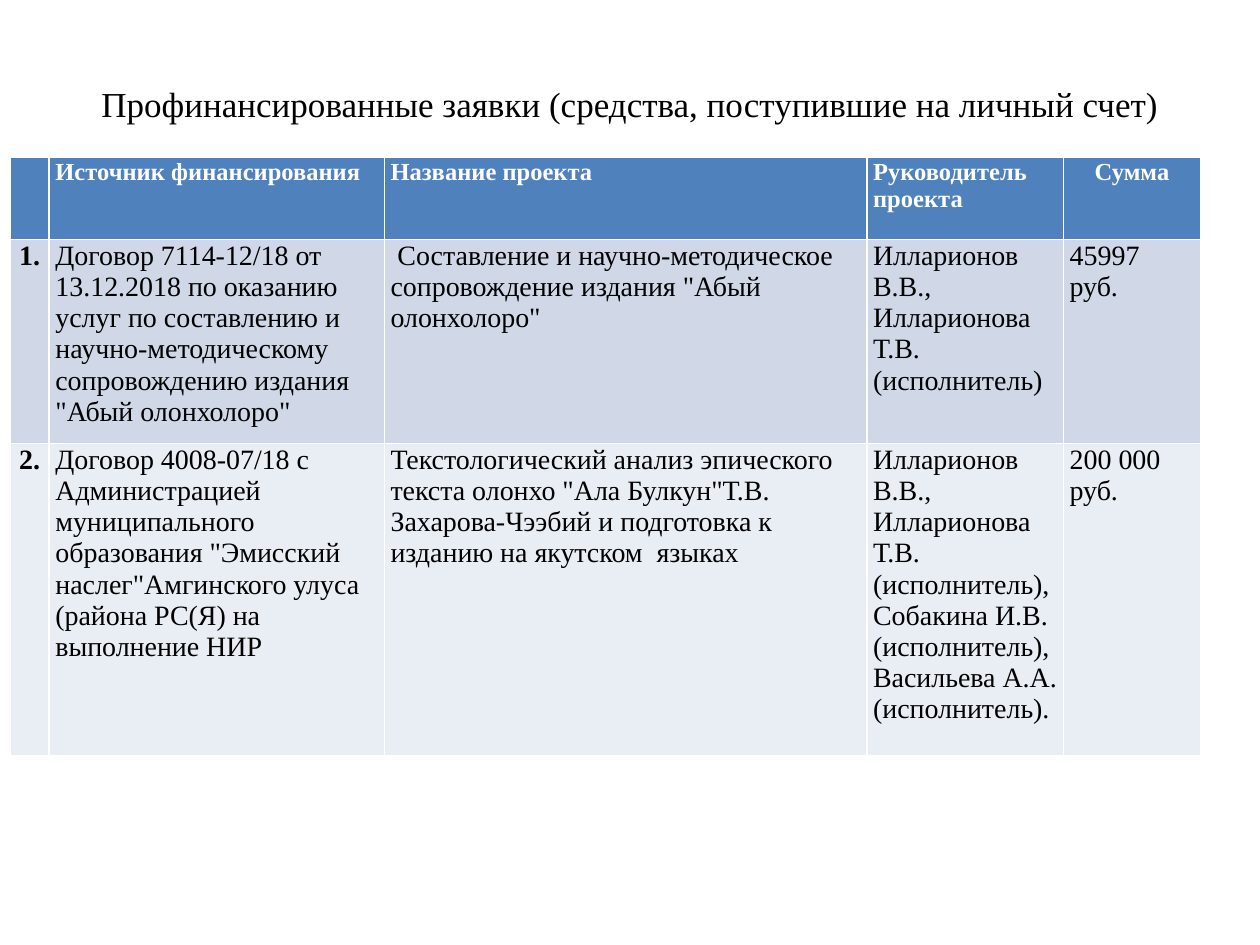
from dataclasses import dataclass

import pptx
import pptx.dml.color
import pptx.enum.text
import pptx.util

Inches = pptx.util.Inches
ALIGN = pptx.enum.text.PP_ALIGN
ANCHOR = pptx.enum.text.MSO_ANCHOR


@dataclass(frozen=True)
class Theme:
    font: str = "Times New Roman"
    text: str = "000000"
    header_text: str = "FFFFFF"
    header_fill: str = "4F81BD"
    band_fills: tuple = ("D0D8E8", "E9EDF4")
    title_size: int = 20
    header_size: int = 14
    body_size: int = 16


THEME = Theme()
TITLE = "Профинансированные заявки (средства, поступившие на личный счет)"
COLUMN_WIDTHS = (0.31, 2.66, 3.83, 1.56, 1.09)
ROW_HEIGHTS = (0.65, 1.5, 2.48)
HEADERS = ("", "Источник финансирования", "Название проекта",
           "Руководитель проекта", "Сумма")
PROJECTS = (
    ("1.",
     "Договор 7114-12/18 от 13.12.2018 по оказанию услуг по составлению и "
     "научно-методическому сопровождению издания \"Абый олонхолоро\"",
     " Составление и научно-методическое сопровождение издания \"Абый олонхолоро\"",
     "Илларионов В.В.,\nИлларионова Т.В. (исполнитель)",
     "45997 руб."),
    ("2.",
     "Договор 4008-07/18 с Администрацией муниципального образования "
     "\"Эмисский наслег\"Амгинского улуса (района РС(Я) на выполнение НИР",
     "Текстологический анализ эпического текста олонхо \"Ала Булкун\"Т.В. "
     "Захарова-Чээбий и подготовка к изданию на якутском  языках",
     "Илларионов В.В.,\nИлларионова Т.В. (исполнитель),\n"
     "Собакина И.В. (исполнитель),\nВасильева А.А. (исполнитель).",
     "200 000 руб."),
)


def rgb(value):
    return pptx.dml.color.RGBColor.from_string(value)


def write_text(tf, text, size, color, bold=False, align=ALIGN.LEFT):
    tf.text = text
    for p in tf.paragraphs:
        p.alignment = align
        for r in p.runs:
            r.font.name = THEME.font
            r.font.size = pptx.util.Pt(size)
            r.font.bold = bold
            r.font.color.rgb = rgb(color)


def add_title(slide):
    box = slide.shapes.add_textbox(Inches(0.5), Inches(0.47), Inches(9), Inches(0.7))
    tf = box.text_frame
    tf.word_wrap = True
    tf.vertical_anchor = ANCHOR.MIDDLE
    write_text(tf, TITLE, THEME.title_size, THEME.text, align=ALIGN.CENTER)


def fill_cell(cell, text, fill, **text_format):
    cell.fill.solid()
    cell.fill.fore_color.rgb = rgb(fill)
    cell.margin_left = cell.margin_right = Inches(0.05)
    cell.margin_top = cell.margin_bottom = Inches(0.01)
    write_text(cell.text_frame, text, **text_format)


def add_projects_table(slide):
    """Add the table; its default style draws the white cell borders."""
    frame = slide.shapes.add_table(
        len(ROW_HEIGHTS), len(COLUMN_WIDTHS), Inches(0.08), Inches(1.25),
        Inches(sum(COLUMN_WIDTHS)), Inches(sum(ROW_HEIGHTS)))
    table = frame.table
    for column, width in zip(table.columns, COLUMN_WIDTHS):
        column.width = Inches(width)
    for row, height in zip(table.rows, ROW_HEIGHTS):
        row.height = Inches(height)

    last = len(HEADERS) - 1
    for col, text in enumerate(HEADERS):
        fill_cell(table.cell(0, col), text, THEME.header_fill,
                  size=THEME.header_size, color=THEME.header_text, bold=True,
                  align=ALIGN.CENTER if col == last else ALIGN.LEFT)
    for row, (project, fill) in enumerate(zip(PROJECTS, THEME.band_fills), start=1):
        for col, text in enumerate(project):
            is_number = col == 0
            fill_cell(table.cell(row, col), text, fill,
                      size=THEME.body_size, color=THEME.text, bold=is_number,
                      align=ALIGN.CENTER if is_number else ALIGN.LEFT)


def main():
    prs = pptx.Presentation()
    prs.slide_width, prs.slide_height = Inches(10), Inches(7.5)
    slide = prs.slides.add_slide(prs.slide_layouts[6])
    add_title(slide)
    add_projects_table(slide)
    prs.save("out.pptx")


if __name__ == "__main__":
    main()
